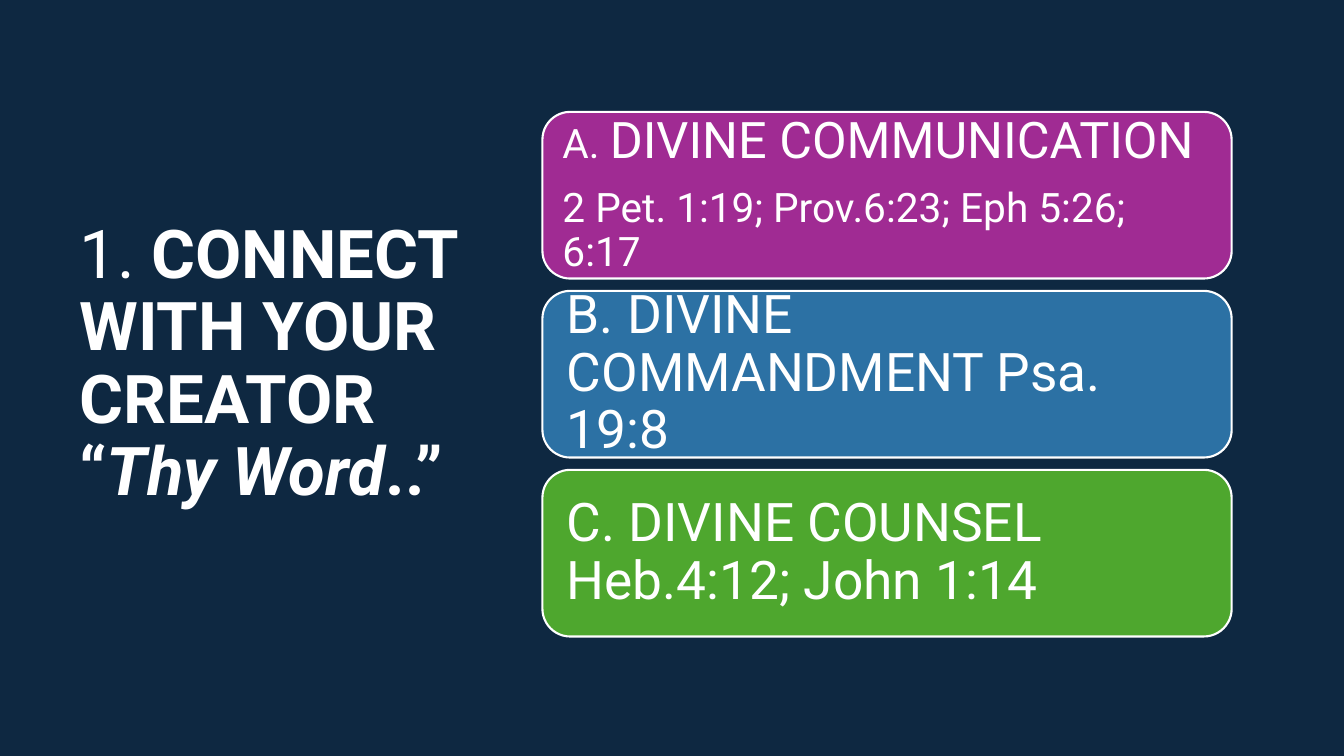
from pptx import Presentation
from pptx import util as u
from pptx.dml import color
from pptx.enum import shapes, text


def rgb(value):
    return color.RGBColor.from_string(value)


def style(paragraph, size, space_after=0):
    paragraph.alignment = text.PP_ALIGN.LEFT
    paragraph.line_spacing = 0.9
    paragraph.space_before = u.Pt(0)
    paragraph.space_after = u.Pt(space_after)
    paragraph.font.name = "Roboto"
    paragraph.font.size = u.Pt(size)
    paragraph.font.color.rgb = rgb("FFFFFF")


presentation = Presentation()
presentation.slide_width = u.Cm(33.87)
presentation.slide_height = u.Cm(19.05)
slide = presentation.slides.add_slide(presentation.slide_layouts[5])
slide.background.fill.solid()
slide.background.fill.fore_color.rgb = rgb("0E2841")

# Title on the left
title = slide.shapes.title
title.left, title.top = u.Cm(1.75), u.Cm(1.37)
title.width, title.height = u.Cm(11.66), u.Cm(15.67)
title.text_frame.word_wrap = True
title.text_frame.auto_size = text.MSO_AUTO_SIZE.NONE
title.text_frame.vertical_anchor = text.MSO_ANCHOR.MIDDLE
paragraph = title.text_frame.paragraphs[0]
style(paragraph, 48)
for words, bold, italic in [
    ("1. ", False, False),
    ("CONNECT WITH YOUR CREATOR ", True, False),
    (None, True, False),
    ("“", True, False),
    ("Thy Word", True, True),
    ("..”", True, False),
]:
    if words is None:
        paragraph.add_line_break()
        continue
    run = paragraph.add_run()
    run.text = words
    run.font.bold = bold
    run.font.italic = italic

# Stacked cards: fill, inset in cm, paragraphs made of (text, size) runs
cards = [
    ("A02B93", 0.3, [[("A. ", 29), ("DIVINE COMMUNICATION", 36)],
                     [("2 Pet. 1:19; Prov.6:23; Eph 5:26; 6:17", 29)]]),
    ("2C71A4", 0.41, [[("B. DIVINE COMMANDMENT Psa. 19:8", 38)]]),
    ("4EA72E", 0.41, [[("C. DIVINE COUNSEL Heb.4:12; John 1:14", 38)]]),
]
for row, (fill, inset, paragraphs) in enumerate(cards):
    card = slide.shapes.add_shape(
        shapes.MSO_SHAPE.ROUNDED_RECTANGLE,
        u.Cm(13.67), u.Cm(2.82 + 4.51 * row), u.Cm(17.37), u.Cm(4.2))
    card.shadow.inherit = False
    card.fill.solid()
    card.fill.fore_color.rgb = rgb(fill)
    card.line.color.rgb = rgb("FFFFFF")
    card.line.width = u.Pt(1.5)

    frame = card.text_frame
    frame.word_wrap = True
    frame.vertical_anchor = text.MSO_ANCHOR.MIDDLE
    frame.margin_left = frame.margin_right = u.Cm(inset)
    frame.margin_top = frame.margin_bottom = u.Cm(inset)
    for index, runs in enumerate(paragraphs):
        paragraph = frame.add_paragraph() if index else frame.paragraphs[0]
        largest = max(size for words, size in runs)
        style(paragraph, largest, space_after=round(0.35 * largest, 1))
        for words, size in runs:
            run = paragraph.add_run()
            run.text = words
            if size != largest:
                run.font.size = u.Pt(size)

presentation.save("out.pptx")
